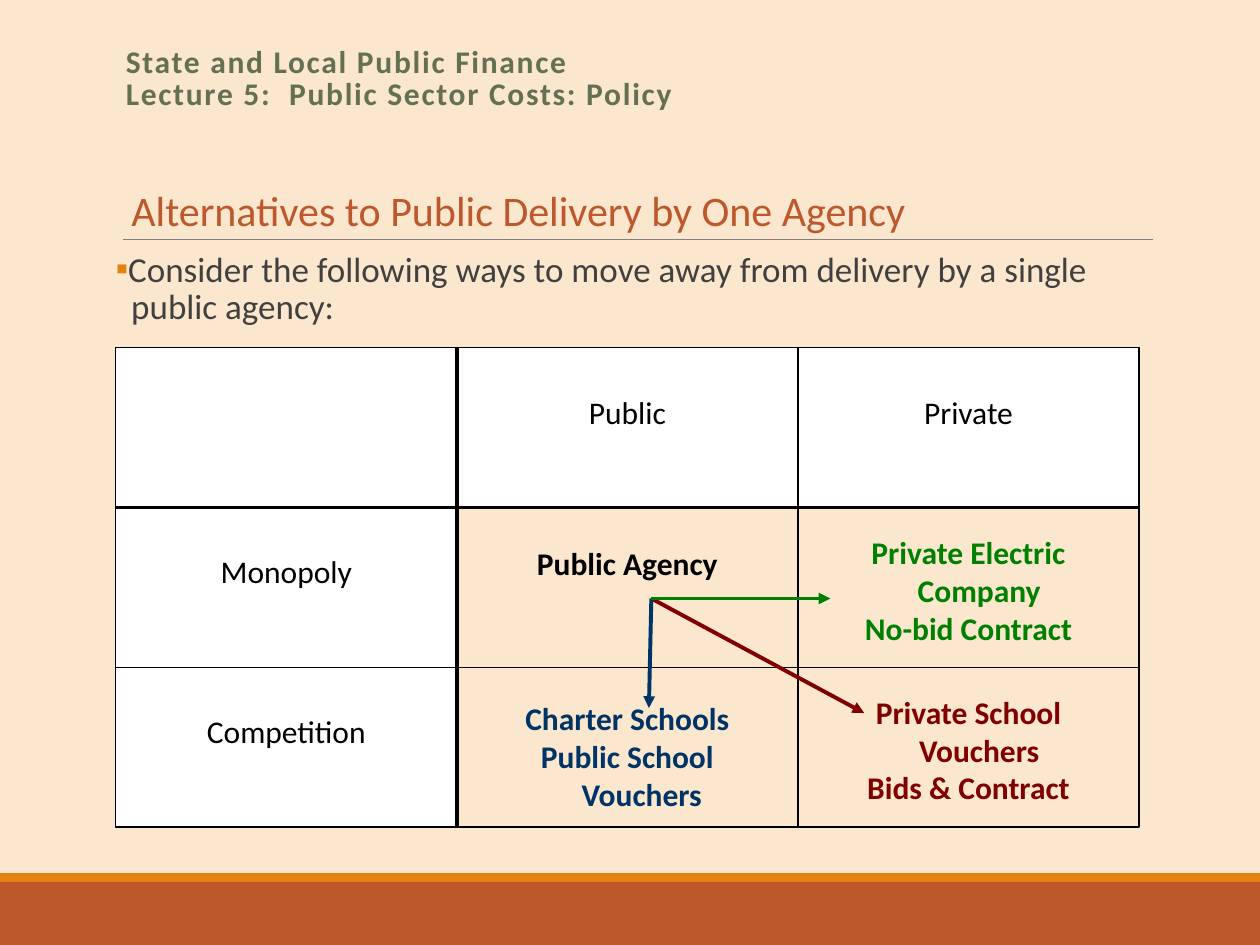
import pptx
import pptx.util
import pptx.dml.color
import pptx.enum.shapes
import pptx.enum.text
import pptx.oxml
import pptx.oxml.ns

Pt = pptx.util.Pt
RGB = pptx.dml.color.RGBColor
ALIGN = pptx.enum.text.PP_ALIGN
ANCHOR = pptx.enum.text.MSO_ANCHOR
RECT = pptx.enum.shapes.MSO_SHAPE.RECTANGLE
LINE = pptx.enum.shapes.MSO_CONNECTOR.STRAIGHT

CREAM = RGB(0xFB, 0xE6, 0xCE)
RUST = RGB(0xBD, 0x58, 0x2C)
AMBER = RGB(0xE4, 0x83, 0x12)
GRAY = RGB(0x80, 0x80, 0x80)
DARK = RGB(0x40, 0x40, 0x40)
OLIVE = RGB(0x63, 0x70, 0x52)
BLACK = RGB(0, 0, 0)
WHITE = RGB(0xFF, 0xFF, 0xFF)
NAVY = RGB(0, 0x33, 0x66)
GREEN = RGB(0, 0x80, 0)
MAROON = RGB(0x80, 0, 0)


def node(tag, attrs=""):
    return pptx.oxml.parse_xml(f"<a:{tag} {pptx.oxml.ns.nsdecls('a')} {attrs}/>")


class Deck:
    font = "Calibri"

    def __init__(self, wide, high, back):
        self.prs = pptx.Presentation()
        self.prs.slide_width, self.prs.slide_height = Pt(wide), Pt(high)
        self.slide = self.prs.slides.add_slide(self.prs.slide_layouts[6])
        fill = self.slide.background.fill
        fill.solid()
        fill.fore_color.rgb = back

    def box(self, x, y, w, h, fill=None, line=None):
        shape = self.slide.shapes.add_shape(RECT, Pt(x), Pt(y), Pt(w), Pt(h))
        shape.shadow.inherit = False
        if fill is None:
            shape.fill.background()
        else:
            shape.fill.solid()
            shape.fill.fore_color.rgb = fill
        if line is None:
            shape.line.fill.background()
        else:
            shape.line.color.rgb = line
            shape.line.width = Pt(0.75)
        return shape

    def rule(self, start, end, color, width, arrow=False):
        ends = [Pt(v) for v in (*start, *end)]
        line = self.slide.shapes.add_connector(LINE, *ends)
        line.line.color.rgb = color
        line.line.width = Pt(width)
        if arrow:
            line.line._get_or_add_ln().append(node("tailEnd", 'type="triangle"'))
        line._element.spPr.append(node("effectLst"))

    def run(self, para, text, size, color, bold=False):
        run = para.add_run()
        run.text = text
        font = run.font
        font.name, font.size, font.bold = self.font, Pt(size), bold
        font.color.rgb = color
        return run

    def label(self, shape, lines, color, bold, drop):
        """Centred lines, each a text and its left indent, below a top gap."""
        frame = shape.text_frame
        frame.word_wrap = True
        frame.vertical_anchor = ANCHOR.TOP
        frame.margin_top = Pt(drop)
        for i, (text, indent) in enumerate(lines):
            para = frame.add_paragraph() if i else frame.paragraphs[0]
            para.alignment = ALIGN.CENTER
            para._p.get_or_add_pPr().set("marL", str(Pt(indent)))
            self.run(para, text, 18, color, bold)

    def text(self, x, y, w, h, lines, size, color, space, bold=False,
             wrap=True, pad=7.2, track=0):
        """One paragraph whose lines are parted by line breaks."""
        shape = self.slide.shapes.add_textbox(Pt(x), Pt(y), Pt(w), Pt(h))
        frame = shape.text_frame
        frame.word_wrap = wrap
        frame.margin_left = frame.margin_right = Pt(pad)
        para = frame.paragraphs[0]
        para.line_spacing = space
        for i, line in enumerate(lines):
            if i:
                para.add_line_break()
            run = self.run(para, line, size, color, bold)
            if track:
                run._r.get_or_add_rPr().set("spc", str(track * 100))
        return para

    def bullet(self, para, mark, color, indent):
        props = para._p.get_or_add_pPr()
        props.set("marL", str(Pt(indent)))
        props.set("indent", str(-Pt(indent)))
        tint = node("buClr")
        tint.append(node("srgbClr", f'val="{color}"'))
        props.append(tint)
        props.append(node("buFont", f'typeface="{self.font}"'))
        props.append(node("buChar", f'char="{mark}"'))


def main():
    deck = Deck(720, 540, CREAM)

    # Footer bands and title rule
    deck.box(0, 504, 720, 36, RUST)
    deck.box(0, 499, 720, 5, AMBER)
    deck.rule((70.5, 136.8), (658.8, 136.8), GRAY, 0.5)

    # Headings and lead sentence
    deck.text(64.8, 23.8, 594, 46.8,
              ["State and Local Public Finance",
               "Lecture 5:  Public Sector Costs: Policy"],
              18, OLIVE, 0.85, bold=True, track=1)
    title = deck.text(59.8, 105.1, 473, 33.1,
                      ["Alternatives to Public Delivery by One Agency"],
                      24, RUST, 0.9, wrap=False)
    title.alignment = ALIGN.CENTER
    lead = deck.text(66.2, 140.4, 593.3, 56,
                     ["Consider the following ways to move away from delivery by a single",
                      " public agency:"],
                     20, DARK, 0.9, pad=0)
    deck.bullet(lead, "▪", AMBER, 4.3)

    # Matrix: lines with indents, colour, top gap
    left, top, wide, high = 66.2, 198.7, 194.9, 91.3
    grid = [
        [([], BLACK, 0),
         ([("Public", 0)], BLACK, 25.6),
         ([("Private", 0)], BLACK, 25.6)],
        [([("Monopoly", 0)], BLACK, 25.6),
         ([("Public Agency", 0)], BLACK, 20.7),
         ([("Private Electric", 0), ("Company", 12.2), ("No-bid Contract", 0)],
          GREEN, 14.6)],
        [([("Competition", 0)], BLACK, 25.6),
         ([("Charter Schools", 0), ("Public School", 0), ("Vouchers", 16.3)],
          NAVY, 18.2),
         ([("Private School", 0), ("Vouchers", 12.2), ("Bids & Contract", 0)],
          MAROON, 14.6)],
    ]
    for r, row in enumerate(grid):
        for c, (lines, color, drop) in enumerate(row):
            inner = r > 0 and c > 0
            cell = deck.box(left + c * wide, top + r * high, wide, high,
                            None if inner else WHITE, BLACK)
            if lines:
                deck.label(cell, lines, color, inner, drop)

    # Arrows away from the single agency
    start = (372.2, 342)
    for end, color in [((493.9, 407.5), MAROON), ((370.8, 404.6), NAVY),
                       ((474.5, 342), GREEN)]:
        deck.rule(start, end, color, 2.25, arrow=True)

    # Heavy rules beside the row and column heads
    deck.rule((left + wide, top), (left + wide, top + 3 * high), BLACK, 2.25)
    deck.rule((left, top + high), (left + 3 * wide, top + high), BLACK, 2.25)

    deck.prs.save("out.pptx")


if __name__ == "__main__":
    main()
